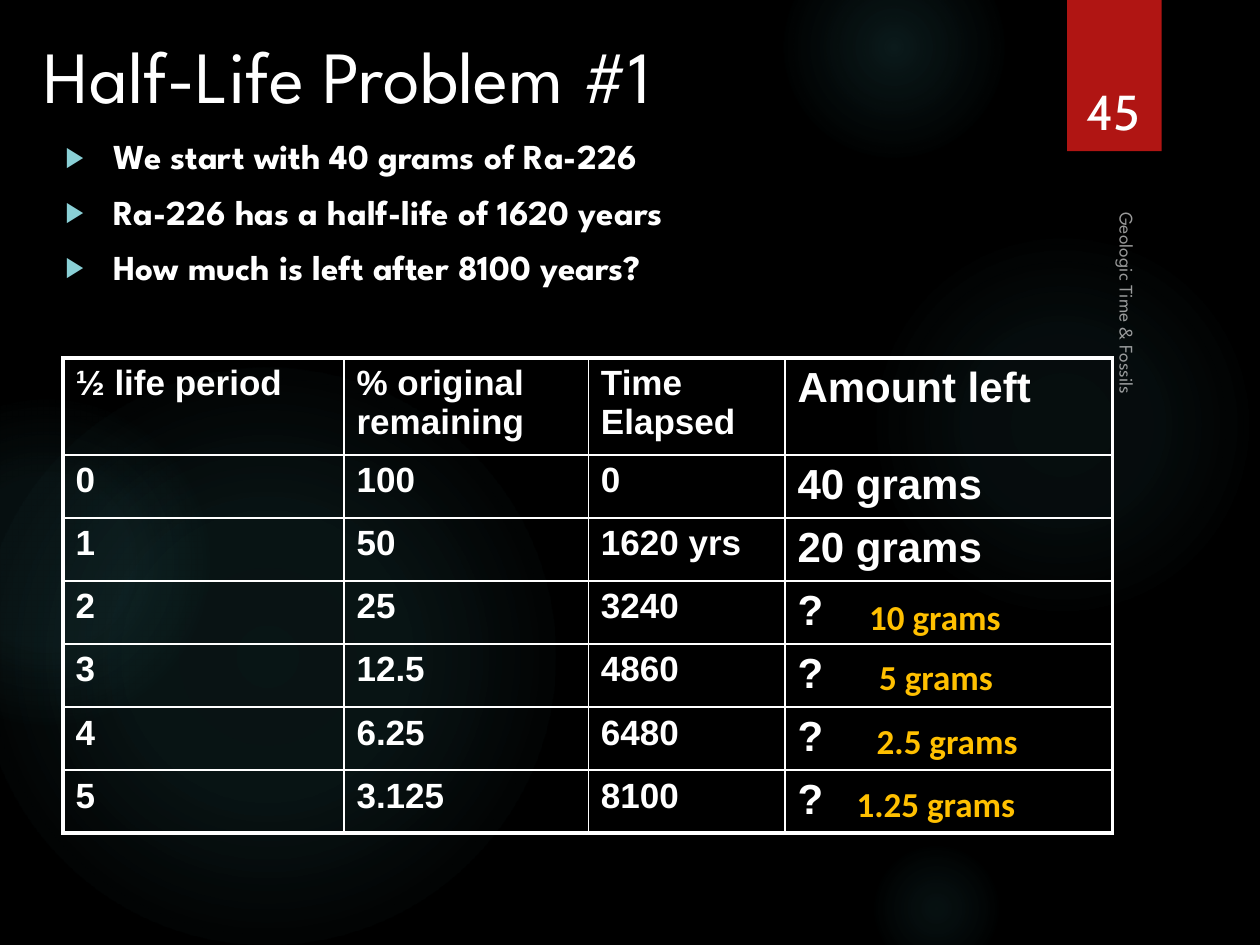
import pptx
import pptx.util
import pptx.dml.color
import pptx.enum.shapes
import pptx.enum.text
import pptx.oxml
import pptx.oxml.ns

HUES = {"back": "000000", "text": "FFFFFF", "glow": "50B9C1", "tab": "B01513",
        "mark": "8AD0D6", "gold": "FFC000"}
COLS, ROWS = 10, 7.5  # one grid cell is one inch
HEAD = "League Spartan"
KIND = pptx.enum.shapes.MSO_SHAPE
ANCHOR = pptx.enum.text.MSO_ANCHOR
ALIGN = pptx.enum.text.PP_ALIGN
NS = pptx.oxml.ns.nsdecls("a")

# box, then (stop %, opacity %) from centre to rim
GLOWS = [
    ((6.89, 1.83, 3.08, 3.08), [(0, 7), (36, 6), (69, 0)]),
    ((6.22, -0.5, 1.75, 1.75), [(0, 14), (36, 7), (73, 0)]),
    ((6.89, 6.67, 1.08, 1.08), [(0, 9), (36, 5), (66, 0)]),
    ((-0.17, 2.92, 4.58, 4.58), [(0, 11), (36, 10), (75, 0)]),
    ((-0.92, 3.17, 2.58, 2.58), [(0, 8), (36, 8), (72, 0)]),
]
FACTS = ["We start with 40 grams of Ra-226",
         "Ra-226 has a half-life of 1620 years",
         "How much is left after 8100 years?"]
DECAY = [
    ["½ life period", "% original remaining", "Time Elapsed", "Amount left"],
    ["0", "100", "0", "40 grams"],
    ["1", "50", "1620 yrs", "20 grams"],
    ["2", "25", "3240", "?"],
    ["3", "12.5", "4860", "?"],
    ["4", "6.25", "6480", "?"],
    ["5", "3.125", "8100", "?"],
]
ANSWERS = [("10 grams", 6.8, 4.68, 1.42), ("5 grams", 6.88, 5.15, 1.27),
           ("2.5 grams", 6.86, 5.66, 1.5), ("1.25 grams", 6.7, 6.16, 1.65)]


def rgb(name):
    return pptx.dml.color.RGBColor.from_string(HUES[name])


def node(xml):
    """Parse one element whose tag carries the {ns} slot."""
    return pptx.oxml.parse_xml(xml.replace("{ns}", NS))


class Deck:
    def __init__(self):
        self.file = pptx.Presentation()
        self.file.slide_width = pptx.util.Inches(COLS)
        self.file.slide_height = pptx.util.Inches(ROWS)
        self.page = self.file.slides.add_slide(self.file.slide_layouts[6])
        fill = self.page.background.fill
        fill.solid()
        fill.fore_color.rgb = rgb("back")

    def grid(self, box):
        return [pptx.util.Inches(n) for n in box]

    def shape(self, kind, box):
        item = self.page.shapes.add_shape(kind, *self.grid(box))
        item.shadow.inherit = False
        item.line.fill.background()
        return item

    def glow(self, box, stops):
        item = self.shape(KIND.OVAL, box)
        item.fill.gradient()
        grad = item._element.spPr.find(pptx.oxml.ns.qn("a:gradFill"))
        for part in list(grad):
            grad.remove(part)
        marks = "".join(
            f'<a:gs pos="{at * 1000}"><a:srgbClr val="{HUES["glow"]}">'
            f'<a:alpha val="{seen * 1000}"/></a:srgbClr></a:gs>'
            for at, seen in stops)
        grad.append(node(f"<a:gsLst {{ns}}>{marks}</a:gsLst>"))
        grad.append(node('<a:path {ns} path="circle"><a:fillToRect l="50000" '
                         't="50000" r="50000" b="50000"/></a:path>'))

    def tab(self, box):
        item = self.shape(KIND.RECTANGLE, box)
        item.fill.solid()
        item.fill.fore_color.rgb = rgb("tab")
        item._element.spPr.find(pptx.oxml.ns.qn("a:effectLst")).append(node(
            '<a:outerShdw {ns} blurRad="38100" dist="25400" dir="5400000" '
            'rotWithShape="0"><a:srgbClr val="000000"><a:alpha val="45000"/>'
            '</a:srgbClr></a:outerShdw>'))

    def font(self, para, size, face, hue="text", bold=False):
        look = {"size": pptx.util.Pt(size), "name": face, "bold": bold}
        for run in para.runs:
            for key, value in look.items():
                setattr(run.font, key, value)
            run.font.color.rgb = rgb(hue)

    def text(self, box, lines, size, face, hue="text", bold=False,
             anchor=ANCHOR.TOP, align=ALIGN.LEFT, wrap=True):
        item = self.page.shapes.add_textbox(*self.grid(box))
        frame = item.text_frame
        frame.text = "\n".join(lines)
        frame.word_wrap = wrap
        frame.vertical_anchor = anchor
        if not wrap:
            frame.auto_size = pptx.enum.text.MSO_AUTO_SIZE.SHAPE_TO_FIT_TEXT
        for para in frame.paragraphs:
            para.alignment = align
            self.font(para, size, face, hue, bold)
        return item

    def bullets(self, box, lines):
        item = self.text(box, lines, 20, HEAD, bold=True)
        for para in item.text_frame.paragraphs:
            para.line_spacing = 0.9
            para.space_before = pptx.util.Pt(10)
            props = para._p.get_or_add_pPr()
            inset = pptx.util.Inches(0.38)
            props.set("marL", str(inset))
            props.set("indent", str(-inset))
            for xml in (f'<a:buClr {{ns}}><a:srgbClr val="{HUES["mark"]}"/></a:buClr>',
                        '<a:buSzPct {ns} val="80000"/>',
                        '<a:buFont {ns} typeface="Arial"/>',
                        '<a:buChar {ns} char="▶"/>'):
                props.append(node(xml))

    def side(self, box, line):
        """Faded line of text that reads downwards."""
        item = self.text(box, [line], 11, HEAD, anchor=ANCHOR.BOTTOM)
        item.rotation = 90
        for clr in item._element.iter(pptx.oxml.ns.qn("a:srgbClr")):
            clr.append(node('<a:alpha {ns} val="60000"/>'))

    def table(self, box, data, wide, high):
        table = self.page.shapes.add_table(
            len(data), len(wide), *self.grid(box)).table
        table.first_row = table.horz_banding = False
        for col, size in zip(table.columns, wide):
            col.width = pptx.util.Inches(size)
        for row, size in zip(table.rows, high):
            row.height = pptx.util.Inches(size)
        last_r, last_c = len(data) - 1, len(wide) - 1
        for r, row in enumerate(data):
            for c, words in enumerate(row):
                cell = table.cell(r, c)
                cell.text = words
                size = 24 if c == last_c else 20
                self.font(cell.text_frame.paragraphs[0], size, "Arial", bold=True)
                rim = {"L": c == 0, "R": c == last_c, "T": r == 0, "B": r == last_r}
                self.edges(cell, rim)
                cell.fill.background()

    def edges(self, cell, rim):
        """Rule the sides of a cell, thicker on the table's rim."""
        props = cell._tc.get_or_add_tcPr()
        for side, outer in rim.items():
            width = pptx.util.Pt(2.25 if outer else 1)
            props.append(node(
                f'<a:ln{side} {{ns}} w="{width}"><a:solidFill><a:srgbClr '
                f'val="{HUES["text"]}"/></a:solidFill></a:ln{side}>'))


def main():
    deck = Deck()
    for box, stops in GLOWS:
        deck.glow(box, stops)
    deck.tab((8.47, 0, 0.75, 1.2))
    deck.text((0.25, 0.19, 8.5, 0.5), ["Half-Life Problem #1"], 42, HEAD)
    deck.bullets((0.42, 1.06, 9.17, 1.83), FACTS)
    deck.table((0.5, 2.84, 8.33, 3.77), DECAY,
               [2.23, 1.94, 1.56, 2.6], [0.77] + [0.5] * 6)
    for words, left, top, wide in ANSWERS:
        deck.text((left, top, wide, 0.43), [words], 20, "Calibri", "gold",
                  bold=True, wrap=False)
    deck.side((6.82, 3.57, 4.22, 0.25), "Geologic Time & Fossils")
    deck.text((8.49, 0.32, 0.69, 0.84), ["45"], 28, "Cabin",
              anchor=ANCHOR.BOTTOM, align=ALIGN.CENTER)
    deck.file.save("out.pptx")


if __name__ == "__main__":
    main()
